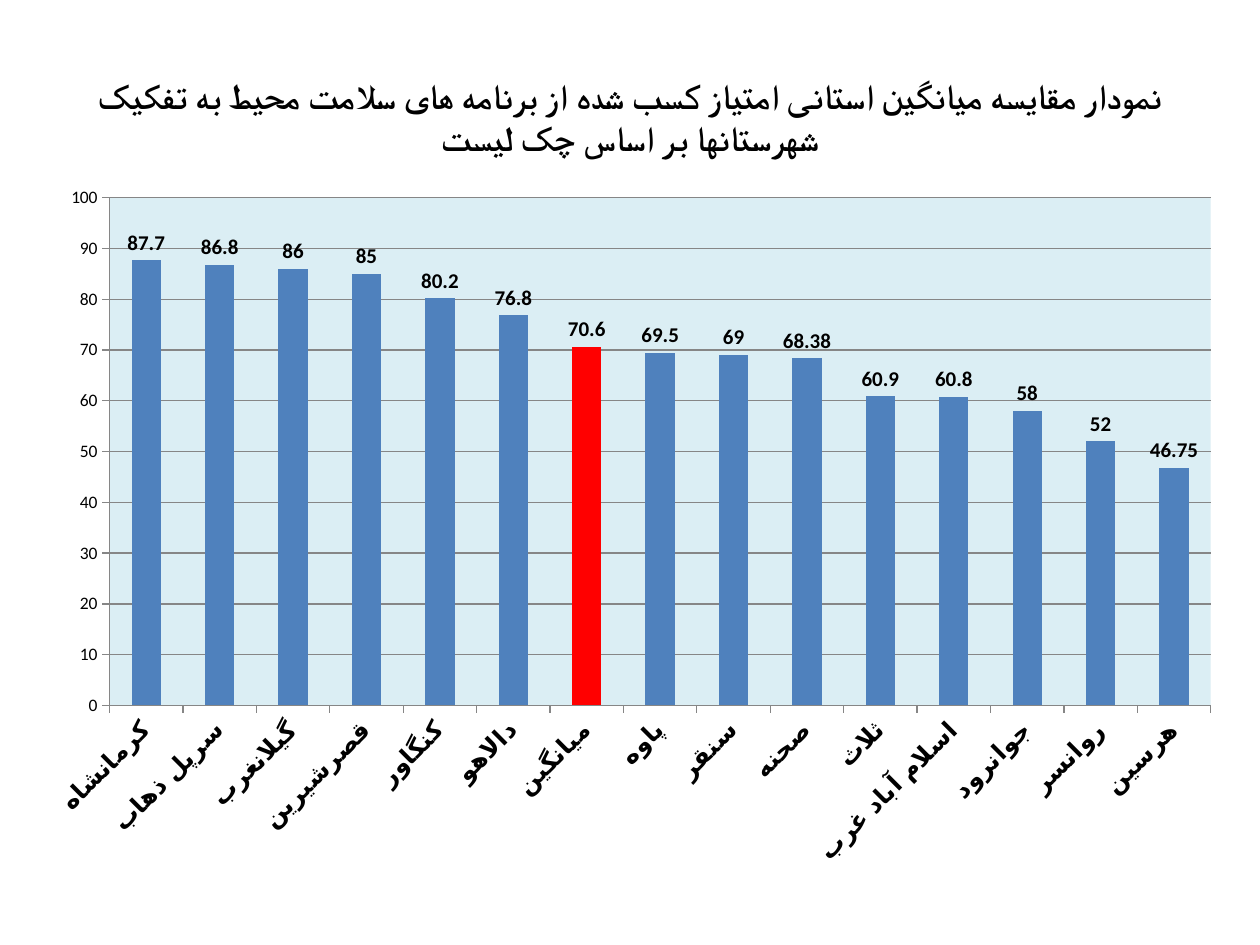
from lxml import etree
from pptx import Presentation
from pptx.chart.data import CategoryChartData
from pptx.dml.color import RGBColor
from pptx.enum.chart import XL_CHART_TYPE, XL_LABEL_POSITION, XL_TICK_MARK
from pptx.enum.text import MSO_ANCHOR, PP_ALIGN
from pptx.oxml import parse_xml
from pptx.oxml.ns import nsdecls, qn
from pptx.util import Inches, Pt

COLUMN = XL_CHART_TYPE.COLUMN_CLUSTERED
OUTSIDE = XL_LABEL_POSITION.OUTSIDE_END
TICK = XL_TICK_MARK.OUTSIDE
MIDDLE = MSO_ANCHOR.MIDDLE
CENTER = PP_ALIGN.CENTER

FACE = "Calibri"
BLACK = RGBColor(0x00, 0x00, 0x00)
BLUE = RGBColor(0x4F, 0x81, 0xBD)
RED = RGBColor(0xFF, 0x00, 0x00)
GRAY = RGBColor(0x86, 0x86, 0x86)
PALE = RGBColor(0xDB, 0xEE, 0xF4)

WIDE, HIGH = 9.53, 5.59  # chart size in inches

TITLE = ("نمودار مقایسه میانگین استانی امتیاز کسب شده از برنامه های "
         "سلامت محیط به تفکیک شهرستانها بر اساس چک لیست")
MEAN = "میانگین"
SCORES = {
    "کرمانشاه": 87.7, "سرپل ذهاب": 86.8, "گیلانغرب": 86,
    "قصرشیرین": 85, "کنگاور": 80.2, "دالاهو": 76.8, MEAN: 70.6,
    "پاوه": 69.5, "سنقر": 69, "صحنه": 68.38, "ثلاث": 60.9,
    "اسلام آباد غرب": 60.8, "جوانرود": 58, "روانسر": 52, "هرسین": 46.75,
}


def style(font, size, bold=False, color=BLACK, face=FACE):
    font.name, font.size, font.bold = face, Pt(size), bold
    font.color.rgb = color


def write(frame, text, align=CENTER, rtl=True, **form):
    para = frame.paragraphs[0]
    para.alignment = align
    if rtl:
        para._p.get_or_add_pPr().set("rtl", "1")
    run = para.add_run()
    run.text = text
    style(run.font, **form)
    script = etree.SubElement(run._r.get_or_add_rPr(), qn("a:cs"))
    script.set("typeface", FACE)


def paint(fill, color):
    fill.solid()
    fill.fore_color.rgb = color


def dress_plot(chart, color, x, y, w, h):
    """Fill the plot area and fix its inner box, in shares of the chart."""
    area = chart._chartSpace.chart.plotArea
    for old in area.findall(qn("c:layout")):
        area.remove(old)
    box = parse_xml(f"<c:layout {nsdecls('c')}><c:manualLayout/></c:layout>")
    parts = {"layoutTarget": "inner", "xMode": "edge", "yMode": "edge",
             "x": x, "y": y, "w": w, "h": h}
    for name, val in parts.items():
        etree.SubElement(box[0], qn("c:" + name)).set("val", str(val))
    area.insert(0, box)
    area.append(parse_xml(
        f"<c:spPr {nsdecls('c', 'a')}><a:solidFill>"
        f'<a:srgbClr val="{color}"/></a:solidFill></c:spPr>'))


class Deck:
    """Holds the style and the current slide; boxes are shares of its size."""

    def __init__(self, width=10, height=7.5):
        self.prs = Presentation()
        self.prs.slide_width = Inches(width)
        self.prs.slide_height = Inches(height)
        self.slide = self.prs.slides.add_slide(self.prs.slide_layouts[5])

    def place(self, x, y, w, h):
        wide, high = self.prs.slide_width, self.prs.slide_height
        return int(x * wide), int(y * high), int(w * wide), int(h * high)

    def title(self, text, box):
        shape = self.slide.shapes.title
        shape.left, shape.top, shape.width, shape.height = self.place(*box)
        shape.text_frame.vertical_anchor = MIDDLE
        write(shape.text_frame, text, size=20, bold=True)

    def chart(self, scores, mark, box):
        data = CategoryChartData()
        data.categories = list(scores)
        data.add_series("Series 1", list(scores.values()))
        frame = self.slide.shapes.add_chart(COLUMN, *self.place(*box), data)
        chart = frame.chart
        chart.has_legend = chart.has_title = False
        style(chart.font, 10)
        self.bars(chart.plots[0], list(scores).index(mark))
        self.axes(chart)
        dress_plot(chart, PALE, 0.59 / WIDE, 0.18 / HIGH,
                   8.74 / WIDE, 4.03 / HIGH)

    def bars(self, plot, spot):
        plot.gap_width = 150
        plot.vary_by_categories = False
        row = plot.series[0]
        row.invert_if_negative = False
        paint(row.format.fill, BLUE)
        paint(row.points[spot].format.fill, RED)
        plot.has_data_labels = True
        tags = plot.data_labels
        tags.show_value = True
        tags.position = OUTSIDE
        style(tags.font, 12, bold=True)

    def axes(self, chart):
        cat, val = chart.category_axis, chart.value_axis
        for axis in (cat, val):
            axis.major_tick_mark = TICK
            axis.format.line.color.rgb = GRAY
        style(cat.tick_labels.font, 14, bold=True)
        style(val.tick_labels.font, 10)
        slant = cat._element.find(qn("c:txPr")).find(qn("a:bodyPr"))
        slant.set("rot", "-2700000")
        val.minimum_scale, val.maximum_scale, val.major_unit = 0, 100, 10
        val.has_major_gridlines = True
        val.major_gridlines.format.line.color.rgb = GRAY

    def save(self):
        self.prs.save("out.pptx")


def main():
    deck = Deck()
    deck.title(TITLE, (0.05, 0.04, 0.9, 1 / 6))
    deck.chart(SCORES, MEAN, (0.28 / 10, 1.39 / 7.5, WIDE / 10, HIGH / 7.5))
    deck.save()


if __name__ == "__main__":
    main()
